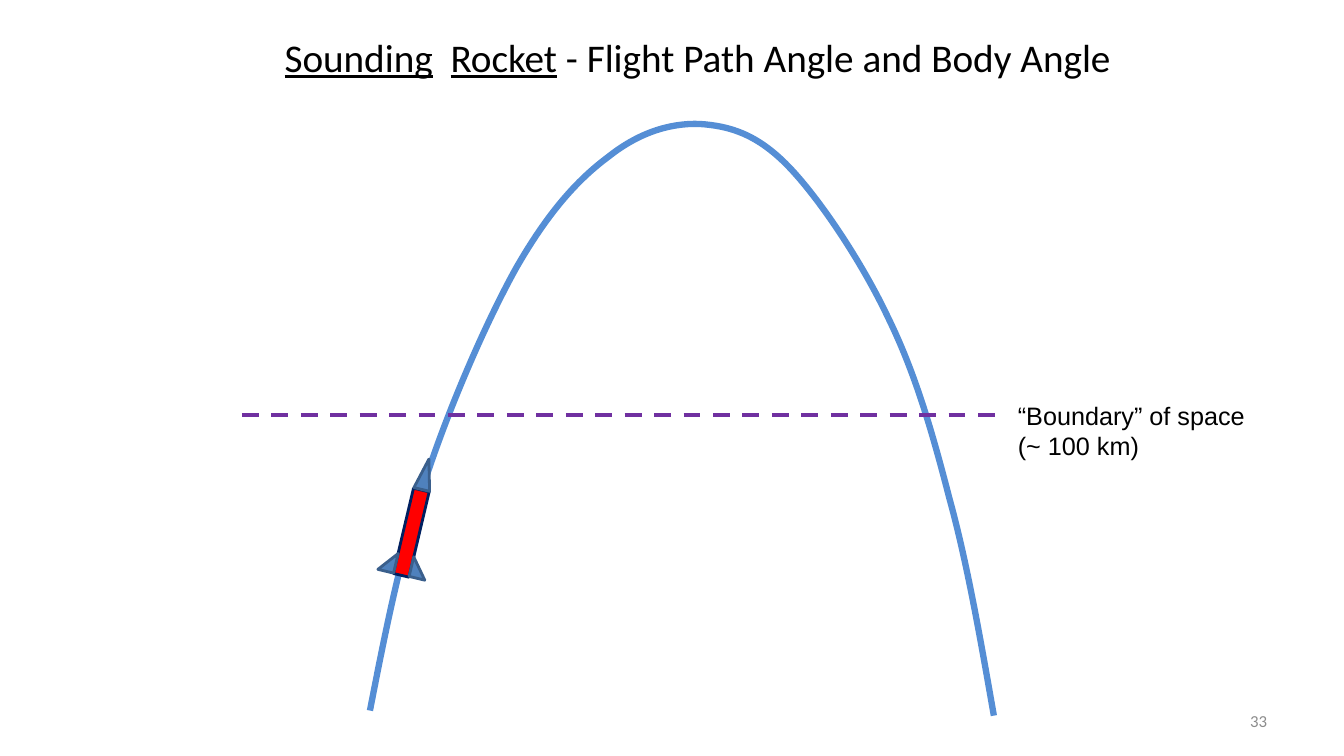
from lxml import etree
from pptx import Presentation
from pptx.dml.color import RGBColor
from pptx.enum.dml import MSO_LINE
from pptx.enum.shapes import MSO_CONNECTOR, MSO_SHAPE as SHAPE
from pptx.enum.text import MSO_ANCHOR as ANCHOR, MSO_AUTO_SIZE as FIT, PP_ALIGN as ALIGN
from pptx.oxml.ns import qn
from pptx.util import Inches, Pt

# Content: paragraphs are lists of (text, underlined) runs
TITLE = [[("Sounding", True), ("  ", False), ("Rocket", True),
          (" - Flight Path Angle and Body Angle", False)]]
BOUNDARY = [[("“Boundary” of space", False)], [("(~ 100 km)", False)]]
PAGE = [[("33", False)]]

# Flight path: start point, then (control, control, end) of each curve
PATH_START = (3.67, 7.05)
PATH_CURVES = [
    ((3.82, 6.28), (3.97, 5.52), (4.21, 4.79)),
    ((4.45, 4.05), (4.82, 3.2), (5.12, 2.66)),
    ((5.43, 2.12), (5.72, 1.79), (6.03, 1.56)),
    ((6.33, 1.32), (6.64, 1.22), (6.94, 1.23)),
    ((7.24, 1.25), (7.51, 1.33), (7.82, 1.65)),
    ((8.13, 1.97), (8.55, 2.6), (8.81, 3.15)),
    ((9.08, 3.7), (9.25, 4.29), (9.42, 4.95)),
    ((9.6, 5.6), (9.74, 6.42), (9.86, 7.1)),
]

# Rocket parts: shape, left, top, width, height, fill, line, mirrored
ROCKET_ANGLE = 13.3
BLUE, EDGE = "4F81BD", "3A5F8C"
ROCKET = [
    (SHAPE.RECTANGLE, 4, 4.85, 0.16, 0.87, "FF0000", "002060", False),
    (SHAPE.RIGHT_TRIANGLE, 4.08, 5.54, 0.16, 0.2, BLUE, EDGE, False),
    (SHAPE.RIGHT_TRIANGLE, 3.77, 5.47, 0.16, 0.2, BLUE, EDGE, True),
    (SHAPE.ISOSCELES_TRIANGLE, 4.14, 4.55, 0.16, 0.31, BLUE, EDGE, False),
]

prs = Presentation()
prs.slide_width, prs.slide_height = Inches(40 / 3), Inches(7.5)
s = prs.slides.add_slide(prs.slide_layouts[6])


def rgb(color):
    return RGBColor.from_string(color)


def set_line(shape, color, width):
    shape.line.color.rgb = rgb(color)
    shape.line.width = Pt(width)


def add_text(paragraphs, box, size, font="Calibri", color="000000",
             align=ALIGN.LEFT, anchor=ANCHOR.TOP, fit=FIT.NONE):
    tf = s.shapes.add_textbox(*map(Inches, box)).text_frame
    tf.word_wrap = True
    tf.auto_size = fit
    tf.vertical_anchor = anchor
    for i, runs in enumerate(paragraphs):
        p = tf.add_paragraph() if i else tf.paragraphs[0]
        p.alignment = align
        for text, underlined in runs:
            r = p.add_run()
            r.text = text
            r.font.size, r.font.name = Pt(size), font
            r.font.color.rgb = rgb(color)
            r.font.underline = underlined


# Flight path: a segment to each curve's end, then bent by its control points
builder = s.shapes.build_freeform(*map(Inches, PATH_START))
builder.add_line_segments(
    [tuple(map(Inches, curve[-1])) for curve in PATH_CURVES], close=False)
flight = builder.convert_to_shape()
flight.shadow.inherit = False
flight.fill.background()
set_line(flight, "558ED5", 4.5)
segments = list(flight.element.spPr.iter(qn("a:lnTo")))
for segment, curve in zip(segments, PATH_CURVES):
    bend = etree.Element(qn("a:cubicBezTo"))
    for x, y in curve:
        etree.SubElement(bend, qn("a:pt"), x=str(Inches(x) - flight.left),
                         y=str(Inches(y) - flight.top))
    segment.getparent().replace(segment, bend)

# Title
add_text(TITLE, (2.42, 0.16, 9, 0.81), 28, align=ALIGN.CENTER, anchor=ANCHOR.MIDDLE)

# Rocket
rocket = s.shapes.add_group_shape()
for kind, x, y, w, h, fill, line, mirrored in ROCKET:
    sp = rocket.shapes.add_shape(kind, *map(Inches, (x, y, w, h)))
    sp.shadow.inherit = False
    sp.rotation = ROCKET_ANGLE
    sp.fill.solid()
    sp.fill.fore_color.rgb = rgb(fill)
    set_line(sp, line, 2)
    if mirrored:
        sp.element.spPr.find(qn("a:xfrm")).set("flipH", "1")

# Slide number
add_text(PAGE, (9.56, 6.95, 3.11, 0.4), 12, color="8C8C8C",
         align=ALIGN.RIGHT, anchor=ANCHOR.MIDDLE)

# Boundary of space
boundary = s.shapes.add_connector(
    MSO_CONNECTOR.STRAIGHT, *map(Inches, (2.4, 4.12, 9.88, 4.12)))
set_line(boundary, "7030A0", 3)
boundary.line.dash_style = MSO_LINE.DASH
etree.SubElement(boundary.element.spPr, qn("a:effectLst"))
add_text(BOUNDARY, (10, 3.92, 2.67, 0.71), 18, font="Arial", fit=FIT.SHAPE_TO_FIT_TEXT)

prs.save("out.pptx")
